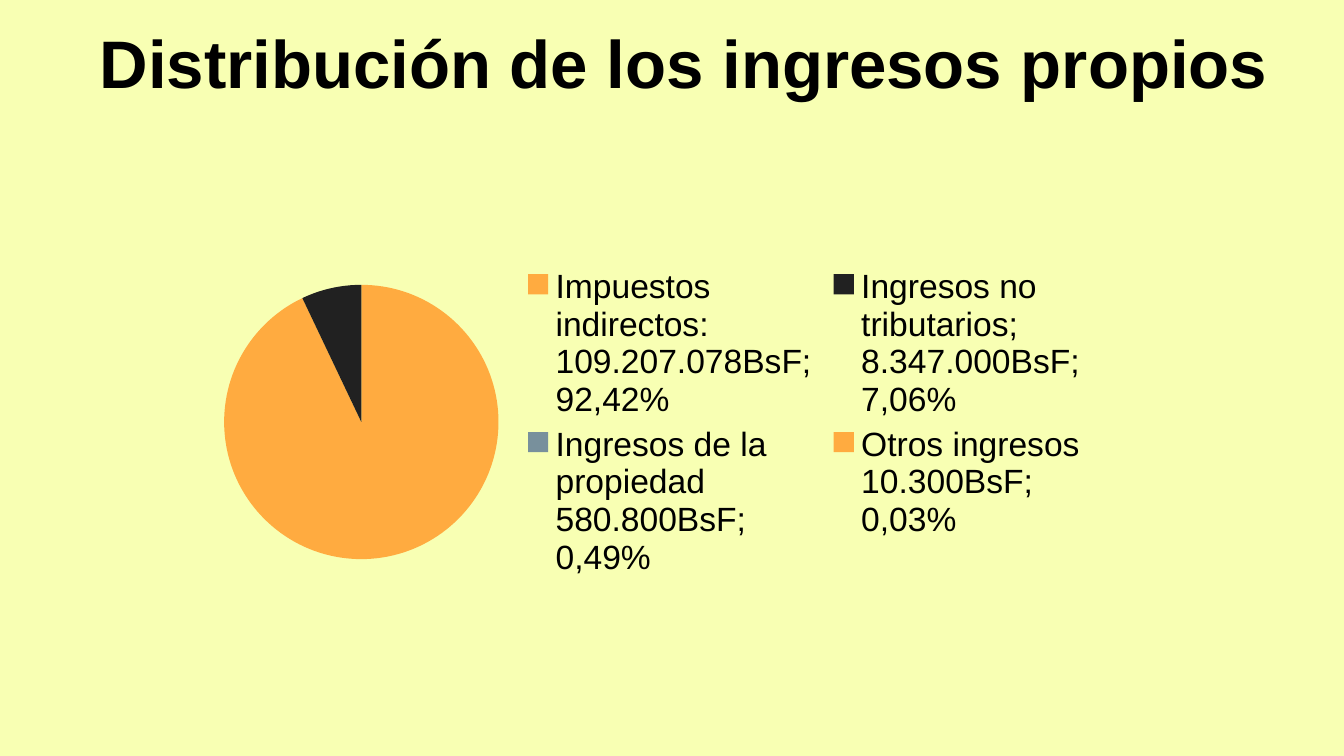
import pptx
import pptx.chart.data
import pptx.dml.color
import pptx.enum.chart
import pptx.enum.text
import pptx.util
from pptx.util import Inches

COLORS = {
    "background": "F8FFB3",
    "text": "000000",
    "orange": "FFAB40",
    "black": "212121",
    "slate": "78909C",
}
FONT = "Arial"
INCOME = [
    ("Impuestos indirectos: 109.207.078BsF; 92,42%", 92, "orange"),
    ("Ingresos no tributarios; 8.347.000BsF; 7,06%", 7, "black"),
    ("Ingresos de la propiedad 580.800BsF; 0,49%", 0, "slate"),
    ("Otros ingresos 10.300BsF; 0,03%", 0, "orange"),
]


def color(name):
    return pptx.dml.color.RGBColor.from_string(COLORS[name])


def style_font(font, size, bold=False):
    font.name = FONT
    font.size = pptx.util.Pt(size)
    font.bold = bold
    font.color.rgb = color("text")


def place_title(page, box, text):
    title = page.shapes.title
    title.left, title.top, title.width, title.height = map(Inches, box)
    frame = title.text_frame
    frame.text = text
    frame.word_wrap = True
    frame.auto_size = pptx.enum.text.MSO_AUTO_SIZE.NONE
    frame.vertical_anchor = pptx.enum.text.MSO_ANCHOR.MIDDLE
    frame.margin_left = frame.margin_right = Inches(0.1)
    frame.margin_top = frame.margin_bottom = Inches(0.1)
    para = frame.paragraphs[0]
    para.alignment = pptx.enum.text.PP_ALIGN.CENTER
    for span in para.runs:
        style_font(span.font, 36, bold=True)


def place_income_pie(page, box):
    data = pptx.chart.data.CategoryChartData()
    data.categories = [label for label, share, fill in INCOME]
    data.add_series("Series 1", [share for label, share, fill in INCOME])
    chart = page.shapes.add_chart(
        pptx.enum.chart.XL_CHART_TYPE.PIE, *map(Inches, box), data
    ).chart
    chart.has_title = False
    style_font(chart.font, 18)
    chart.has_legend = True
    chart.legend.position = pptx.enum.chart.XL_LEGEND_POSITION.RIGHT
    chart.legend.include_in_layout = False
    style_font(chart.legend.font, 18)
    plot = chart.plots[0]
    plot.vary_by_categories = True
    for index, (label, share, fill) in enumerate(INCOME):
        slice_format = plot.series[0].points[index].format
        slice_format.fill.solid()
        slice_format.fill.fore_color.rgb = color(fill)
        slice_format.line.fill.background()


def main():
    deck = pptx.Presentation()
    deck.slide_width = Inches(10)
    deck.slide_height = deck.slide_width * 9 // 16
    page = deck.slides.add_slide(deck.slide_layouts[5])
    page.background.fill.solid()
    page.background.fill.fore_color.rgb = color("background")
    place_title(page, (0.43, 0, 9.32, 0.92), "Distribución de los ingresos propios")
    place_income_pie(page, (1.53, 0.92, 6.67, 4.44))
    deck.save("out.pptx")


if __name__ == "__main__":
    main()
